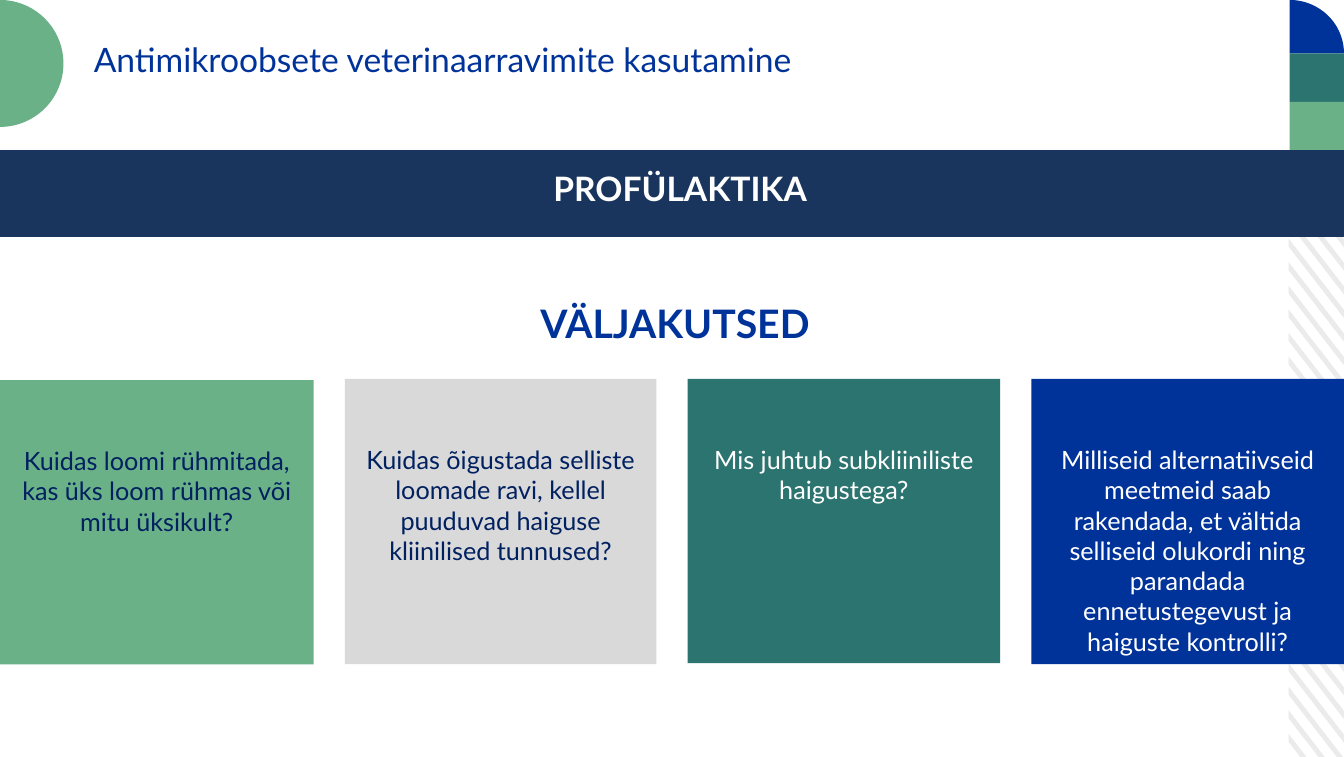
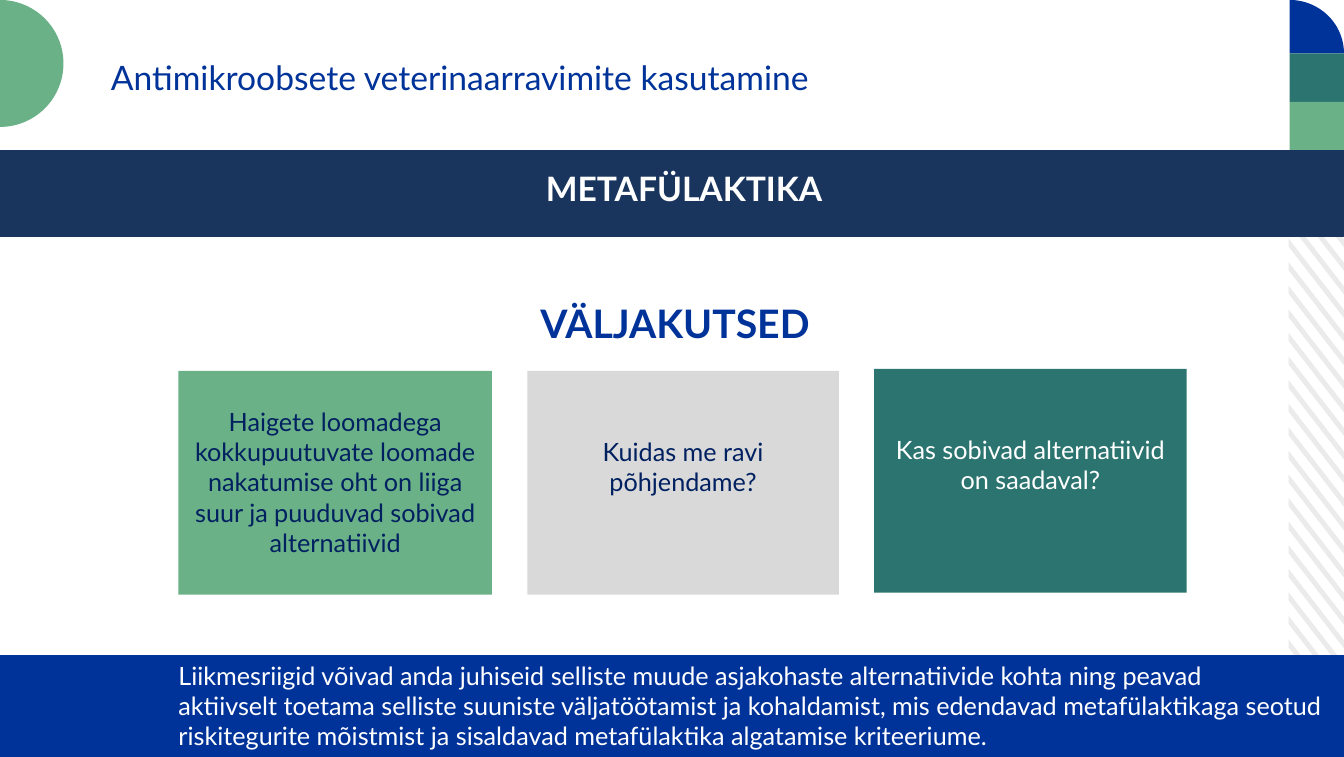
import math
from pptx import Presentation
from pptx.dml.color import RGBColor
from pptx.enum import shapes, text
from pptx.util import Inches, Pt

GREEN, GREY, TEAL, BLUE = "6BB188", "D9D9D9", "2C7470", "003399"
NAVY, INK, STRIPE, WHITE = "19355D", "002060", "ECEBEB", "FFFFFF"
WIDTH, HEIGHT = 13.33, 7.51
TITLE = "Antimikroobsete veterinaarravimite kasutamine"
TITLE_FORMAT = {"size": Pt(24), "name": "Lato", "bold": False}
BAND_FORMAT = {"size": Pt(24), "name": "Lato", "bold": True}
HEADING_FORMAT = {"size": Pt(28), "name": "Lato", "bold": True}
BODY_FORMAT = {"size": Pt(18), "name": "Lato", "bold": False}
LEFT, CENTER = text.PP_ALIGN.LEFT, text.PP_ALIGN.CENTER


def paint(shape, colour):
    shape.shadow.inherit = False
    shape.fill.solid()
    shape.fill.fore_color.rgb = RGBColor.from_string(colour)
    shape.line.fill.background()


def write(box, lines, style, colour, align=CENTER, left=0.1, top=0.05):
    frame = box.text_frame
    frame.word_wrap = True
    frame.auto_size = text.MSO_AUTO_SIZE.NONE
    frame.vertical_anchor = text.MSO_ANCHOR.TOP
    frame.margin_left, frame.margin_top = Inches(left), Inches(top)
    frame.margin_right, frame.margin_bottom = Inches(0.1), Inches(0.05)
    frame.text = "\n".join(lines)
    for para in frame.paragraphs:
        para.alignment = align
        for name, value in style.items():
            setattr(para.runs[0].font, name, value)
        para.runs[0].font.color.rgb = RGBColor.from_string(colour)


topics = [
    {
        "title_at": (0.83, 0.34),
        "band": "PROFÜLAKTIKA",
        "band_left": 0.49,
        "cards": [
            (0, 3.77, 3.11, 2.82, 0.65, GREEN, INK,
             "Kuidas loomi rühmitada, kas üks loom rühmas või mitu üksikult?"),
            (3.42, 3.76, 3.09, 2.83, 0.65, GREY, INK,
             "Kuidas õigustada selliste loomade ravi, kellel puuduvad haiguse kliinilised tunnused?"),
            (6.82, 3.76, 3.1, 2.82, 0.65, TEAL, WHITE,
             "Mis juhtub subkliiniliste haigustega?"),
            (10.23, 3.76, 3.1, 2.83, 0.65, BLUE, WHITE,
             "Milliseid alternatiivseid meetmeid saab rakendada, et vältida selliseid olukordi "
             "ning parandada ennetustegevust ja haiguste kontrolli?"),
        ],
        "note": [],
    },
    {
        "title_at": (1, 0.51),
        "band": "METAFÜLAKTIKA",
        "band_left": 0.53,
        "cards": [
            (1.77, 3.68, 3.11, 2.22, 0.35, GREEN, INK,
             "Haigete loomadega kokkupuutuvate loomade nakatumise oht on liiga suur "
             "ja puuduvad sobivad alternatiivid"),
            (5.23, 3.68, 3.09, 2.22, 0.65, GREY, INK, "Kuidas me ravi põhjendame?"),
            (8.67, 3.66, 3.1, 2.22, 0.65, TEAL, WHITE, "Kas sobivad alternatiivid on saadaval?"),
        ],
        "note": [
            "Liikmesriigid võivad anda juhiseid selliste muude asjakohaste alternatiivide kohta ning peavad",
            "aktiivselt toetama selliste suuniste väljatöötamist ja kohaldamist, mis edendavad "
            "metafülaktikaga seotud riskitegurite mõistmist ja sisaldavad metafülaktika algatamise kriteeriume.",
        ],
    },
]

deck = Presentation()
deck.slide_width, deck.slide_height = Inches(WIDTH), Inches(HEIGHT)
layout = deck.slide_layouts.get_by_name("Title Only")
pages = [deck.slides.add_slide(layout) for topic in topics]
canvas = pages[0].shapes

stripe_left, stripe_top, run, rise = 12.78, 1.54, 0.55, 0.71
stripes = []
for index in range(28):
    upper = 7.28 - index * 0.234
    edges = []
    for start in (upper, upper + 0.08):
        ends = [max(start, stripe_top), min(start + rise, HEIGHT)]
        edges.append([(stripe_left + (y - start) * run / rise, y) for y in ends])
    stripes.append(edges[0] + edges[1][::-1])

outlines = [(STRIPE, stripes)]
for x, y, radius_x, radius_y, sweep, colour in [
    (12.79, 0.53, 0.54, 0.53, 90, BLUE),
    (0, 0.63, 0.63, 0.63, 180, GREEN),
]:
    arc = [
        (x + radius_x * math.sin(math.radians(angle)), y - radius_y * math.cos(math.radians(angle)))
        for angle in range(0, sweep + 1, 3)
    ]
    outlines.append((colour, [[(x, y)] + arc]))

decor = []
for colour, polygons in outlines:
    builder = None
    for polygon in polygons:
        points = [(Inches(x), Inches(y)) for x, y in polygon]
        if builder is None:
            builder = canvas.build_freeform(*points[0])
        else:
            builder.move_to(*points[0])
        builder.add_line_segments(points[1:], close=True)
    shape = builder.convert_to_shape()
    paint(shape, colour)
    decor.append(shape)

for left, top, width, height, colour in [
    (12.79, 0.53, 0.54, 0.48, TEAL),
    (12.79, 1.01, 0.54, 0.53, GREEN),
    (0, 1.49, WIDTH, 0.86, NAVY),
]:
    block = canvas.add_shape(
        shapes.MSO_SHAPE.RECTANGLE, Inches(left), Inches(top), Inches(width), Inches(height))
    paint(block, colour)
    decor.append(block)

for number, shape in enumerate(decor, start=20):
    shape.element.nvSpPr.cNvPr.id = number
    layout.element.cSld.spTree.append(shape.element)

for page, topic in zip(pages, topics):
    title = page.shapes.title
    title.left, title.top = [Inches(value) for value in topic["title_at"]]
    title.width, title.height = Inches(8.76), Inches(0.58)
    write(title, [TITLE], TITLE_FORMAT, BLUE, LEFT)

    band = page.shapes.add_textbox(Inches(topic["band_left"]), Inches(1.62), Inches(12.51), Inches(0.5))
    write(band, [topic["band"]], BAND_FORMAT, WHITE)

    heading = page.shapes.add_textbox(Inches(3.36), Inches(2.92), Inches(6.67), Inches(0.57))
    write(heading, ["VÄLJAKUTSED"], HEADING_FORMAT, BLUE)

    for left, top, width, height, inset, fill, ink, question in topic["cards"]:
        card = page.shapes.add_shape(
            shapes.MSO_SHAPE.RECTANGLE, Inches(left), Inches(top), Inches(width), Inches(height))
        paint(card, fill)
        write(card, [question], BODY_FORMAT, ink, top=inset)

    if topic["note"]:
        note = page.shapes.add_shape(
            shapes.MSO_SHAPE.RECTANGLE, 0, Inches(6.5), Inches(WIDTH), Inches(1.01))
        paint(note, BLUE)
        write(note, topic["note"], BODY_FORMAT, WHITE, LEFT, left=1.77)

deck.save("out.pptx")
